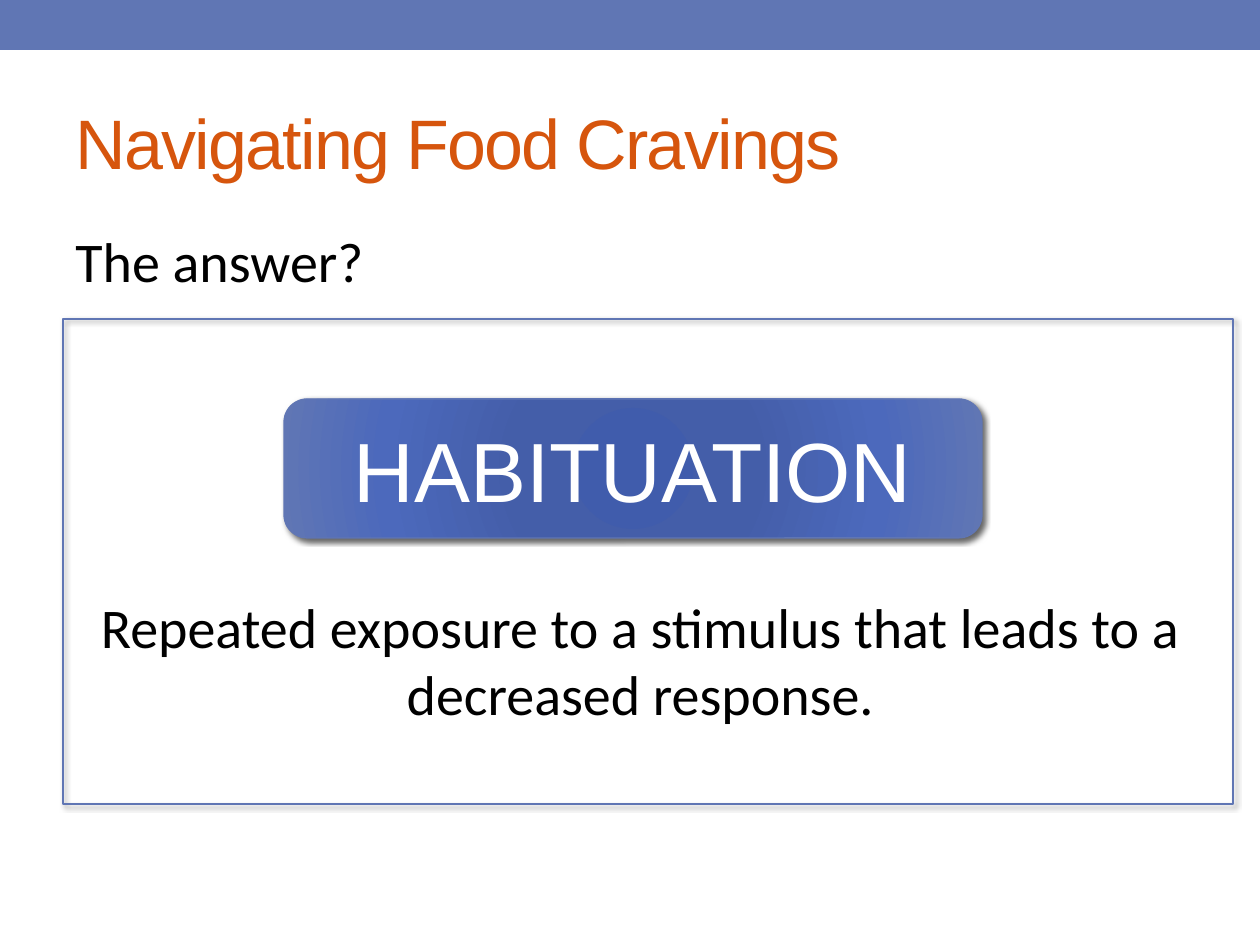
import pptx
import pptx.util
import pptx.dml.color
import pptx.enum.shapes
import pptx.enum.text
import pptx.oxml
import pptx.oxml.ns

RGB = pptx.dml.color.RGBColor
SHAPE = pptx.enum.shapes.MSO_SHAPE
ALIGN = pptx.enum.text.PP_ALIGN
ANCHOR = pptx.enum.text.MSO_ANCHOR
Pt = pptx.util.Pt

BLUE = RGB(0x60, 0x76, 0xB4)
ORANGE = RGB(0xD6, 0x55, 0x0D)
BLACK = RGB(0, 0, 0)
WHITE = RGB(0xFF, 0xFF, 0xFF)
PILL_STOPS = [
    (0, RGB(0x40, 0x5C, 0xAC)),
    (34, RGB(0x44, 0x5E, 0xA9)),
    (70, RGB(0x4C, 0x69, 0xBC)),
    (100, BLUE),
]
EMU_PER_PX = 914400 / 126
NS = pptx.oxml.ns.nsdecls("a")


def px(n):
    return pptx.util.Emu(round(n * EMU_PER_PX))


class Deck:
    """Holds the style and the current slide."""

    head_font = "Arial"
    body_font = "Calibri"

    def __init__(self, width, height):
        self.prs = pptx.Presentation()
        self.prs.slide_width, self.prs.slide_height = px(width), px(height)
        self.s = self.prs.slides.add_slide(self.prs.slide_layouts[5])

    def add_run(self, tf, text, size, color, font, align, anchor):
        tf.word_wrap = True
        tf.vertical_anchor = anchor
        p = tf.paragraphs[0]
        p.alignment = align
        r = p.add_run()
        r.text = text
        r.font.size, r.font.name = Pt(size), font
        r.font.color.rgb = color
        return p, r

    def title(self, text, x, y, w, h):
        sp = self.s.shapes.title
        sp.left, sp.top, sp.width, sp.height = map(px, (x, y, w, h))
        p, r = self.add_run(sp.text_frame, text, 40, ORANGE, self.head_font,
                            ALIGN.LEFT, ANCHOR.MIDDLE)
        r.font._element.set("spc", "-100")

    def text(self, text, x, y, w, h, align=ALIGN.LEFT):
        sp = self.s.shapes.add_textbox(*map(px, (x, y, w, h)))
        p, r = self.add_run(sp.text_frame, text, 32, BLACK, self.body_font,
                            align, ANCHOR.TOP)
        p.space_before, p.space_after = Pt(6.4), Pt(10)

    def shape(self, kind, x, y, w, h, fill=None, line=None):
        sp = self.s.shapes.add_shape(kind, *map(px, (x, y, w, h)))
        sp.shadow.inherit = False
        if fill is None:
            sp.fill.background()
        else:
            sp.fill.solid()
            sp.fill.fore_color.rgb = fill
        if line is None:
            sp.line.fill.background()
        else:
            sp.line.color.rgb = line
            sp.line.width = Pt(0.75)
        return sp

    def cast_shadow(self, sp):
        effects = sp._element.spPr.find(pptx.oxml.ns.qn("a:effectLst"))
        effects.append(pptx.oxml.parse_xml(
            f'<a:outerShdw {NS} blurRad="{Pt(3)}" dist="{Pt(2)}" '
            'dir="2700000" algn="tl" rotWithShape="0">'
            '<a:srgbClr val="000000"><a:alpha val="60000"/></a:srgbClr>'
            '</a:outerShdw>'))

    def radial_fill(self, sp, stops):
        gs = "".join(f'<a:gs pos="{pos * 1000}"><a:srgbClr val="{color}"/></a:gs>'
                     for pos, color in stops)
        grad = pptx.oxml.parse_xml(
            f'<a:gradFill {NS} rotWithShape="1"><a:gsLst>{gs}</a:gsLst>'
            '<a:path path="circle"><a:fillToRect l="100000" t="100000" '
            'r="100000" b="100000"/></a:path></a:gradFill>')
        spPr = sp._element.spPr
        spPr.replace(spPr.find(pptx.oxml.ns.qn("a:solidFill")), grad)

    def pill(self, text, x, y, w, h):
        sp = self.shape(SHAPE.ROUNDED_RECTANGLE, x, y, w, h, BLUE, BLUE)
        self.radial_fill(sp, PILL_STOPS)
        self.cast_shadow(sp)
        self.add_run(sp.text_frame, text, 48, WHITE, self.head_font,
                     ALIGN.CENTER, ANCHOR.MIDDLE)

    def frame(self, x, y, w, h):
        self.cast_shadow(self.shape(SHAPE.RECTANGLE, x, y, w, h, line=BLUE))


def main():
    deck = Deck(1260, 945)

    # Top band and headings
    deck.shape(SHAPE.RECTANGLE, 0, 0, 1260, 50, BLUE)
    deck.title("Navigating Food Cravings", 63, 73, 1134, 136)
    deck.text("The answer?", 63, 220, 1134, 672)

    # Framed answer with its definition
    deck.pill("HABITUATION", 284, 399, 698, 139)
    deck.text("Repeated exposure to a stimulus that leads to a decreased response.",
              63, 586, 1155, 194, ALIGN.CENTER)
    deck.frame(63, 319, 1170, 485)

    deck.prs.save("out.pptx")


if __name__ == "__main__":
    main()
